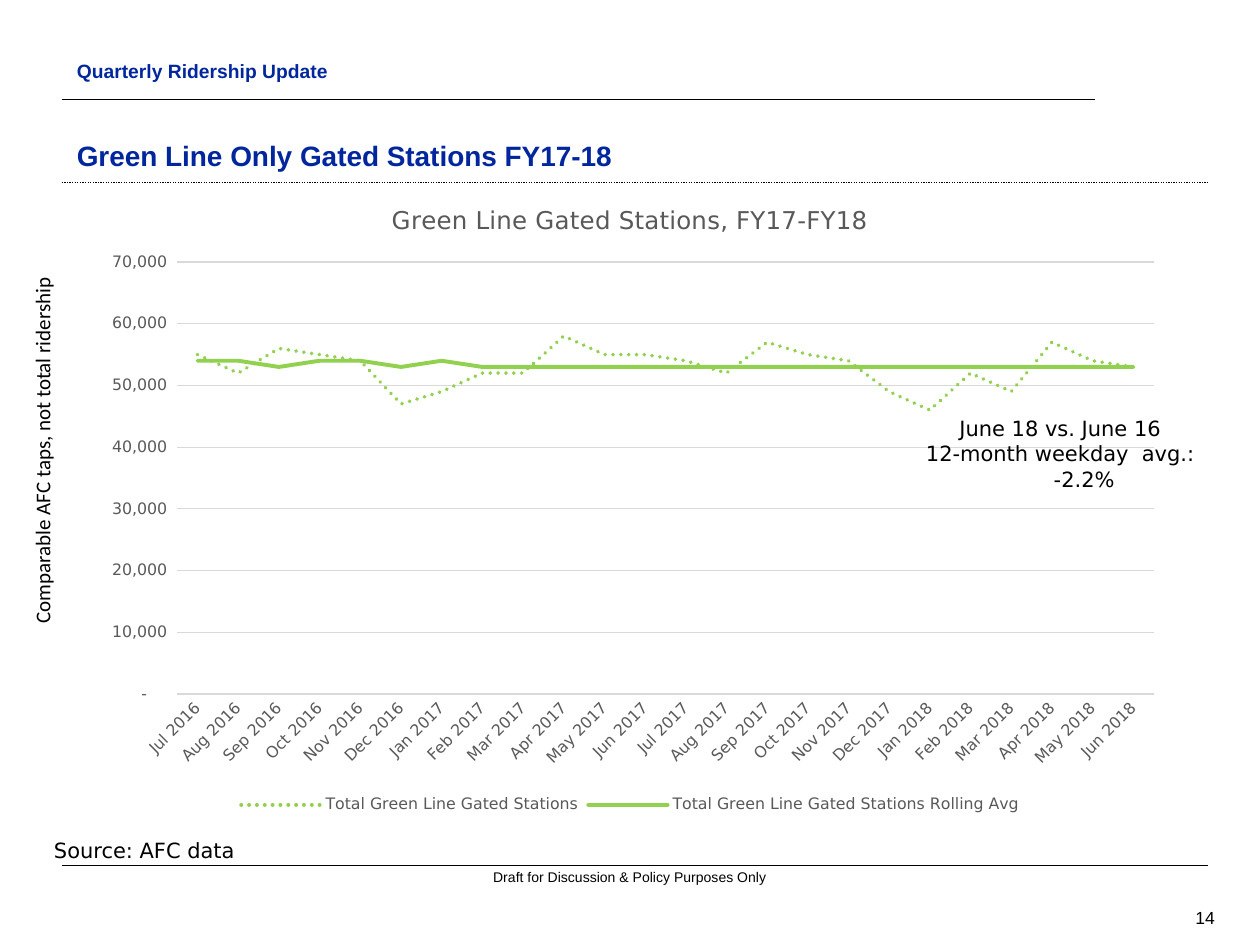
from dataclasses import dataclass, field

from lxml.etree import SubElement
from pptx import Presentation
from pptx.chart.data import CategoryChartData
from pptx.dml.color import RGBColor
from pptx.enum.chart import XL_CHART_TYPE as ChartType, XL_LEGEND_POSITION as LegendPosition
from pptx.enum.chart import XL_MARKER_STYLE as Marker, XL_TICK_MARK as TickMark
from pptx.enum.dml import MSO_LINE as Dash
from pptx.enum.shapes import MSO_CONNECTOR as Connector
from pptx.enum.text import MSO_ANCHOR as Anchor, MSO_AUTO_SIZE as AutoSize, PP_ALIGN as Align
from pptx.oxml.ns import qn
from pptx.util import Inches, Pt


@dataclass(frozen=True)
class Theme:
    black: RGBColor = RGBColor(0x00, 0x00, 0x00)
    blue: RGBColor = RGBColor(0x00, 0x26, 0x9E)
    gray: RGBColor = RGBColor(0x59, 0x59, 0x59)
    grid: RGBColor = RGBColor(0xD9, 0xD9, 0xD9)
    green: RGBColor = RGBColor(0x92, 0xD0, 0x50)
    heading_font: str = "Arial"
    chart_font: str = "DejaVu Sans"
    label_font: str = "Calibri"
    title: float = 16
    chart_title: float = 14
    note: float = 12
    section: float = 11
    page: float = 10
    axis: float = 9
    footer: float = 8


THEME = Theme()


@dataclass(frozen=True)
class Rule:
    y: float
    right: float
    weight: float
    dash: Dash = Dash.SOLID


@dataclass(frozen=True)
class Label:
    lines: tuple[str, ...]
    box: tuple[float, float, float, float]
    size: float
    font: str = THEME.chart_font
    color: RGBColor = THEME.black
    bold: bool = False
    align: Align = Align.LEFT
    hanging: float = 0
    rotation: float = 0
    frame: dict = field(default_factory=dict)


RULE_LEFT = 0.49
RULES = (
    Rule(0.79, 8.69, 1),
    Rule(1.45, 9.59, 0.75, Dash.ROUND_DOT),
    Rule(6.87, 9.59, 0.75),
)
SECTION = Label(("Quarterly Ridership Update",), (0.51, 0.42, 3.41, 0.25), THEME.section,
                THEME.heading_font, THEME.blue, True, hanging=0.25)
TITLE = Label(("Green Line Only Gated Stations FY17-18",), (0.51, 0.91, 9.25, 0.51),
              THEME.title, THEME.heading_font, THEME.blue, True,
              frame={"vertical_anchor": Anchor.BOTTOM})
PAGE_NUMBER = Label(("14",), (8.91, 7.16, 0.83, 0.25), THEME.page, THEME.heading_font,
                    align=Align.RIGHT, frame={"vertical_anchor": Anchor.MIDDLE})
FOOTER = Label(("Draft for Discussion & Policy Purposes Only",), (3.57, 6.89, 2.86, 0.13),
               THEME.footer, THEME.heading_font, align=Align.CENTER,
               frame=dict.fromkeys(("margin_left", "margin_right", "margin_top",
                                    "margin_bottom"), 0))
SOURCE = Label(("Source: AFC data",), (0.33, 6.6, 8.99, 0.3), THEME.note)
AXIS_CAPTION = Label(("Comparable AFC taps, not total ridership",), (-1.16, 3.4, 2.99, 0.3),
                     THEME.note, THEME.label_font, hanging=0.38, rotation=270,
                     frame={"word_wrap": False})
COMPARISON = Label(("June 18 vs. June 16", "12-month weekday  avg.: -2.2%"),
                   (7.25, 3.25, 2.33, 0.71), THEME.note, align=Align.CENTER, hanging=0.38)

MONTHS = "Jan Feb Mar Apr May Jun Jul Aug Sep Oct Nov Dec".split()
FIRST_MONTH = 6
PERIODS = [f"{MONTHS[i % 12]} {2016 + i // 12}" for i in range(FIRST_MONTH, FIRST_MONTH + 24)]
STATION_THOUSANDS = (55, 52, 56, 55, 54, 47, 49, 52, 52, 58, 55, 55,
                     54, 52, 57, 55, 54, 49, 46, 52, 49, 57, 54, 53)
AVERAGE_THOUSANDS = (54, 54, 53, 54, 54, 53, 54) + (53,) * 17
SERIES = (
    ("Total Green Line Gated Stations", STATION_THOUSANDS, Dash.ROUND_DOT),
    ("Total Green Line Gated Stations Rolling Avg", AVERAGE_THOUSANDS, Dash.SOLID),
)
NUMBER_FORMAT = '_(* #,##0_);_(* \\(#,##0\\);_(* "-"??_);_('
PLOT_AREA = {"x": 0.085, "y": 0.13, "w": 0.895, "h": 0.675}


def apply(target, values: dict) -> None:
    for name, value in values.items():
        setattr(target, name, value)


def style_font(font, size: float, name: str, color: RGBColor, bold: bool = False) -> None:
    apply(font, {"size": Pt(size), "name": name, "bold": bold})
    font.color.rgb = color


def style_line(line, color: RGBColor, weight: float, dash: Dash = Dash.SOLID) -> None:
    line.color.rgb = color
    apply(line, {"width": Pt(weight), "dash_style": dash})


def write_label(shape, label: Label) -> None:
    """Place a text box or placeholder and fill it with the label's paragraphs."""
    left, top, width, height = map(Inches, label.box)
    apply(shape, {"left": left, "top": top, "width": width, "height": height,
                  "rotation": label.rotation})
    frame = shape.text_frame
    apply(frame, {"word_wrap": True, "auto_size": AutoSize.NONE,
                  "vertical_anchor": Anchor.TOP} | label.frame)
    frame.text = "\n".join(label.lines)
    for paragraph in frame.paragraphs:
        properties = paragraph._p.get_or_add_pPr()
        properties.set("marL", str(Inches(label.hanging)))
        properties.set("indent", str(-Inches(label.hanging)))
        SubElement(properties, qn("a:buNone"))
        apply(paragraph, {"alignment": label.align, "space_before": Pt(0)})
        for run in paragraph.runs:
            style_font(run.font, label.size, label.font, label.color, label.bold)


def add_label(slide, label: Label) -> None:
    write_label(slide.shapes.add_textbox(*map(Inches, label.box)), label)


def add_rule(slide, rule: Rule) -> None:
    connector = slide.shapes.add_connector(
        Connector.STRAIGHT, Inches(RULE_LEFT), Inches(rule.y), Inches(rule.right), Inches(rule.y))
    style_line(connector.line, THEME.black, rule.weight, rule.dash)
    SubElement(connector._element.spPr, qn("a:effectLst"))


def fix_plot_area(chart) -> None:
    """Pin the inner plot area to fractions of the chart."""
    plot_area = chart._chartSpace.chart.plotArea
    for old_layout in plot_area.findall(qn("c:layout")):
        plot_area.remove(old_layout)
    layout = SubElement(plot_area, qn("c:layout"))
    plot_area.insert(0, layout)
    manual = SubElement(layout, qn("c:manualLayout"))
    settings = {"layoutTarget": "inner", "xMode": "edge", "yMode": "edge"} | PLOT_AREA
    for name, value in settings.items():
        SubElement(manual, qn(f"c:{name}")).set("val", str(value))


def style_axes(chart) -> None:
    category_axis, value_axis = chart.category_axis, chart.value_axis
    for axis in (category_axis, value_axis):
        apply(axis, {"major_tick_mark": TickMark.NONE, "minor_tick_mark": TickMark.NONE})
        style_font(axis.tick_labels.font, THEME.axis, THEME.chart_font, THEME.gray)
    style_line(category_axis.format.line, THEME.grid, 0.75)
    category_axis._element.txPr.find(qn("a:bodyPr")).set("rot", str(-45 * 60000))
    apply(value_axis, {"minimum_scale": 0, "maximum_scale": 70000, "major_unit": 10000,
                       "has_major_gridlines": True})
    value_axis.format.line.fill.background()
    style_line(value_axis.major_gridlines.format.line, THEME.grid, 0.75)
    apply(value_axis.tick_labels,
          {"number_format": NUMBER_FORMAT, "number_format_is_linked": False})


def add_ridership_chart(slide) -> None:
    data = CategoryChartData(number_format="#,##0")
    data.categories = PERIODS
    for name, thousands, _ in SERIES:
        data.add_series(name, [value * 1000 for value in thousands])
    chart = slide.shapes.add_chart(ChartType.LINE, Inches(0.67), Inches(1.42),
                                   Inches(8.66), Inches(5.08), data).chart
    style_font(chart.font, THEME.page, THEME.chart_font, THEME.black)
    apply(chart, {"has_title": True, "has_legend": True})
    chart.chart_title.text_frame.text = "Green Line Gated Stations, FY17-FY18"
    title_run = chart.chart_title.text_frame.paragraphs[0].runs[0]
    style_font(title_run.font, THEME.chart_title, THEME.chart_font, THEME.gray)
    apply(chart.legend, {"position": LegendPosition.BOTTOM, "include_in_layout": False})
    style_font(chart.legend.font, THEME.axis, THEME.chart_font, THEME.gray)
    style_axes(chart)
    fix_plot_area(chart)
    plot = chart.plots[0]
    plot.vary_by_categories = False
    for series, (_, _, dash) in zip(plot.series, SERIES):
        series.smooth = False
        series.marker.style = Marker.NONE
        style_line(series.format.line, THEME.green, 2.25, dash)
        series.format.line._get_or_add_ln().set("cap", "rnd")


def main() -> None:
    presentation = Presentation()
    apply(presentation, {"slide_width": Inches(10), "slide_height": Inches(7.5)})
    slide = presentation.slides.add_slide(presentation.slide_layouts[1])
    for rule in RULES:
        add_rule(slide, rule)
    write_label(slide.placeholders[1], SECTION)
    write_label(slide.shapes.title, TITLE)
    add_ridership_chart(slide)
    for label in (PAGE_NUMBER, FOOTER, SOURCE, AXIS_CAPTION, COMPARISON):
        add_label(slide, label)
    presentation.save("out.pptx")


if __name__ == "__main__":
    main()
